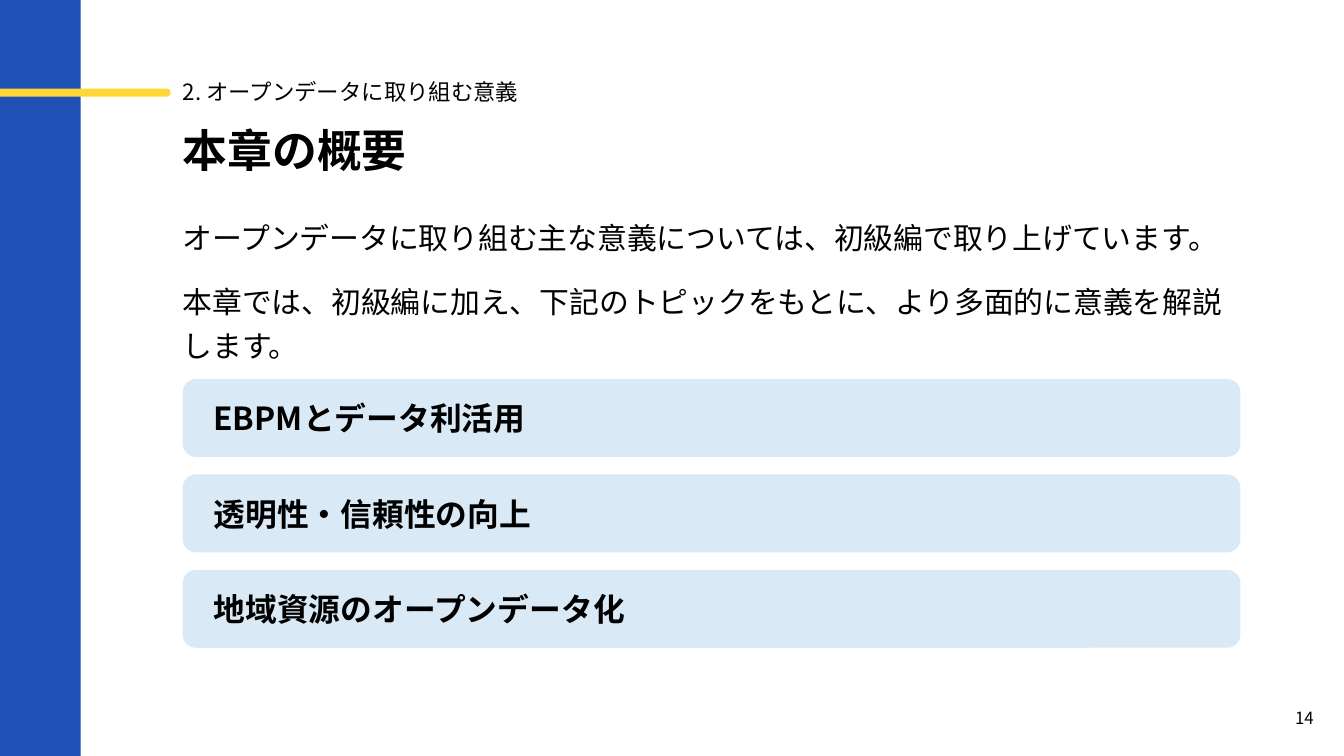
"""Build the chapter overview slide with three topic cards."""
from dataclasses import dataclass

from lxml import etree
from pptx import Presentation
from pptx.dml.color import RGBColor
from pptx.enum.shapes import MSO_SHAPE
from pptx.enum.text import MSO_ANCHOR, MSO_AUTO_SIZE, PP_ALIGN
from pptx.oxml.ns import qn
from pptx.util import Inches, Pt

RECT, ROUND = MSO_SHAPE.RECTANGLE, MSO_SHAPE.ROUNDED_RECTANGLE
TOP, MIDDLE = MSO_ANCHOR.TOP, MSO_ANCHOR.MIDDLE
LEFT, CENTER = PP_ALIGN.LEFT, PP_ALIGN.CENTER
FIXED = MSO_AUTO_SIZE.NONE


@dataclass
class Theme:
    """Hold colours, the font and type sizes."""
    ink: str = "000000"
    blue: str = "1E50B5"
    yellow: str = "FFD737"
    card: str = "0070C0"
    font: str = "Noto Sans CJK JP"
    title: int = 24
    topic: int = 17
    body: int = 16
    label: int = 12
    page: int = 9


def block(kind, box, color):
    """Add a plain filled shape."""
    shape = deck.shapes.add_shape(kind, *map(Inches, box))
    shape.shadow.inherit = False
    shape.fill.solid()
    shape.fill.fore_color.rgb = RGBColor.from_string(color)
    shape.line.fill.background()
    return shape


def write(shape, lines, size, bold=False, anchor=TOP, align=LEFT,
          inset=0, before=0, gap=0, pitch=1):
    """Set the text of a shape and its format."""
    frame = shape.text_frame
    frame.text = "\n".join(lines)
    frame.word_wrap = True
    frame.auto_size = FIXED
    frame.vertical_anchor = anchor
    frame.margin_left = Inches(inset)
    frame.margin_top = frame.margin_right = frame.margin_bottom = 0
    for i, para in enumerate(frame.paragraphs):
        para.alignment = align
        para.line_spacing = pitch
        para.space_before = Pt(gap if i else before)
        font = para.font
        font.size = Pt(size)
        font.bold = bold
        font.name = theme.font
        font.color.rgb = RGBColor.from_string(theme.ink)
        props = para._p.pPr.find(qn("a:defRPr"))
        etree.SubElement(props, qn("a:ea"), typeface=theme.font)


theme = Theme()
wide = 10
high = wide * 9 / 16
left, span = 1.36, 7.87
show = Presentation()
show.slide_width, show.slide_height = Inches(wide), Inches(high)
deck = show.slides.add_slide(show.slide_layouts[5])

block(RECT, (0, 0, 0.06 * wide, high), theme.blue)
rule = block(ROUND, (-0.11, 0.66, 1.38, 0.06), theme.yellow)
rule.adjustments[0] = 0.5

title = deck.shapes.title
title.left, title.top, title.width, title.height = map(Inches, (left, 0.91, span, 0.4))
write(title, ["本章の概要"], theme.title, bold=True)

label = deck.shapes.add_textbox(*map(Inches, (left, 0.55, span, 0.27)))
write(label, ["2. オープンデータに取り組む意義"], theme.label, anchor=MIDDLE)

body = deck.shapes.add_textbox(*map(Inches, (left, 1.57, span, 1.15)))
write(body, [
    "オープンデータに取り組む主な意義については、初級編で取り上げています。",
    "本章では、初級編に加え、下記のトピックをもとに、より多面的に意義を解説します。",
], theme.body, gap=10, pitch=1.25)

first, step, tall = 2.82, 0.71, 0.58
topics = ["EBPMとデータ利活用", "透明性・信頼性の向上", "地域資源のオープンデータ化"]
for row, topic in enumerate(topics):
    card = block(ROUND, (left, first + row * step, span, tall), theme.card)
    card.adjustments[0] = 0.17
    tint = card.fill._xPr.find(qn("a:solidFill"))[0]
    etree.SubElement(tint, qn("a:alpha"), val="15000")
    write(card, [topic], theme.topic, bold=True, anchor=MIDDLE, inset=0.2, before=2)

page = deck.shapes.add_textbox(*map(Inches, (9.49, 5.13, 0.43, 0.43)))
write(page, ["14"], theme.page, anchor=MIDDLE, align=CENTER)

show.save("out.pptx")
